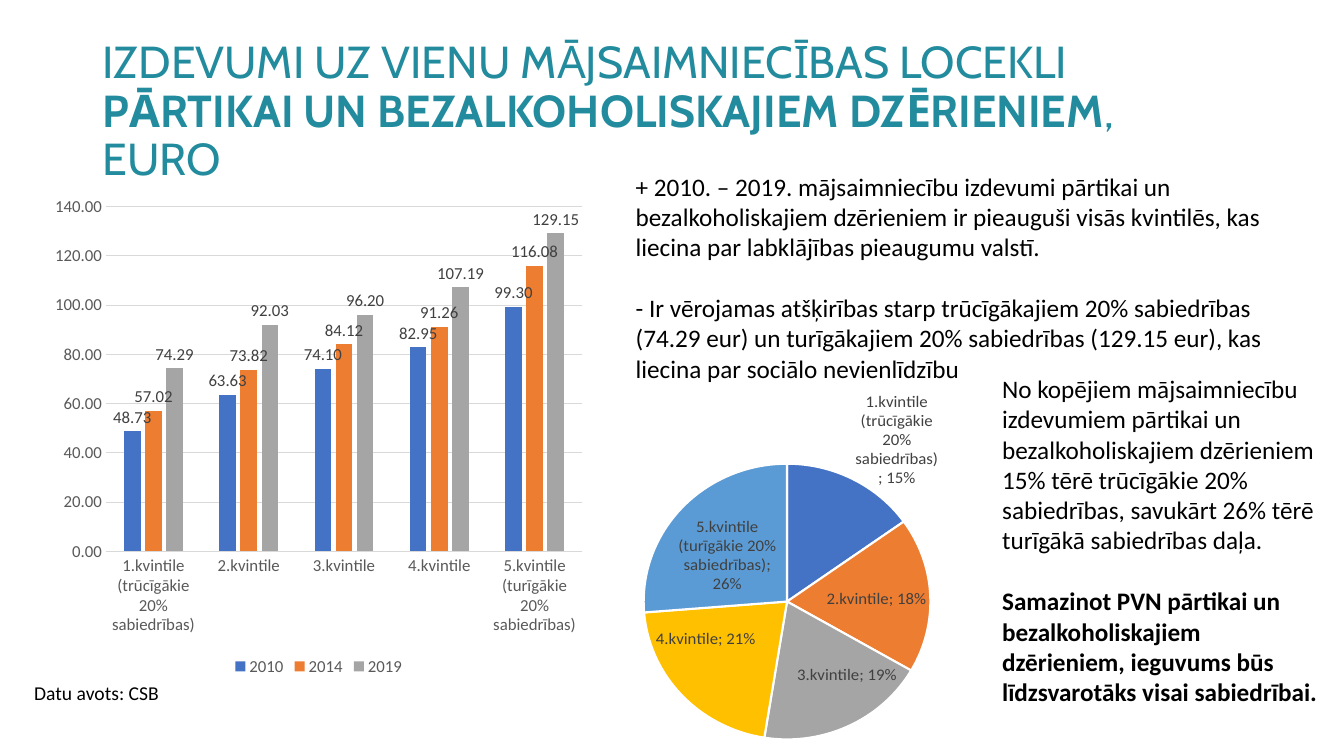
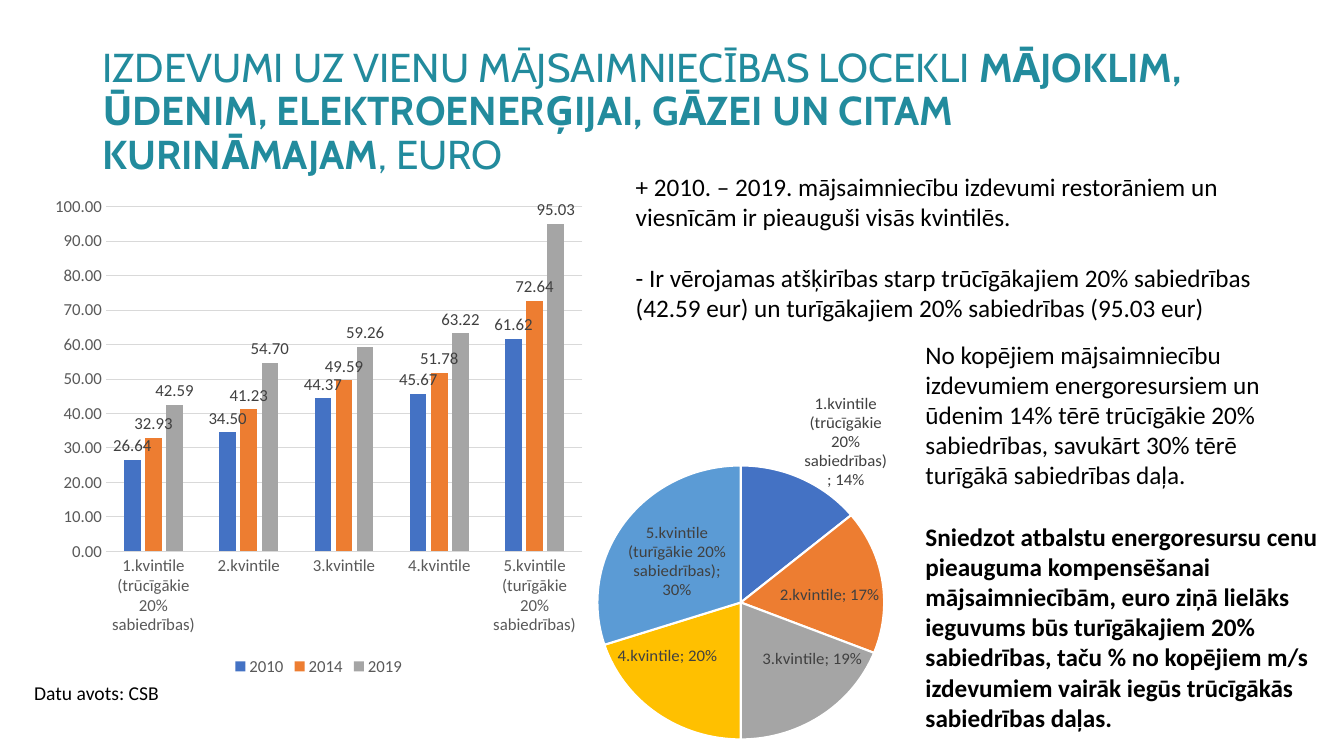
"""Build two slides on household spending by income quintile."""
from lxml import etree
from pptx import Presentation
from pptx.chart.data import CategoryChartData
from pptx.dml.color import RGBColor
from pptx.enum.chart import XL_CHART_TYPE, XL_LABEL_POSITION, XL_LEGEND_POSITION, XL_TICK_MARK
from pptx.enum.text import MSO_ANCHOR, MSO_AUTO_SIZE, PP_ALIGN
from pptx.oxml.ns import qn
from pptx.util import Pt

PX = 9525
COLUMN, PIE = XL_CHART_TYPE.COLUMN_CLUSTERED, XL_CHART_TYPE.PIE
OUTSIDE, BEST_FIT = XL_LABEL_POSITION.OUTSIDE_END, XL_LABEL_POSITION.BEST_FIT
BOTTOM, NO_TICK = XL_LEGEND_POSITION.BOTTOM, XL_TICK_MARK.NONE
LEFT, MIDDLE = PP_ALIGN.LEFT, MSO_ANCHOR.MIDDLE
FIT_SHAPE, NO_FIT = MSO_AUTO_SIZE.SHAPE_TO_FIT_TEXT, MSO_AUTO_SIZE.NONE

COLORS = {
    "title": "228B9D", "text": "000000", "axis": "595959", "label": "404040",
    "grid": "D9D9D9", "white": "FFFFFF", "blue": "4472C4", "orange": "ED7D31",
    "gray": "A5A5A5", "gold": "FFC000", "sky": "5B9BD5",
}
PALETTE = ["blue", "orange", "gray", "gold", "sky"]
YEARS = ["2010", "2014", "2019"]
QUINTILES = [
    "1.kvintile (trūcīgākie 20% sabiedrības)", "2.kvintile", "3.kvintile",
    "4.kvintile", "5.kvintile (turīgākie 20% sabiedrības)",
]
PIE_LAYOUT = {
    "layoutTarget": "inner", "xMode": "edge", "yMode": "edge",
    "x": "0.002", "y": "0.205", "w": "0.66", "h": "0.79",
}

SLIDES = [
    {
        "topic": "PĀRTIKAI UN BEZALKOHOLISKAJIEM DZĒRIENIEM",
        "title_size": 32,
        "spending": [
            [48.73, 63.63, 74.1, 82.95, 99.3],
            [57.02, 73.82, 84.12, 91.26, 116.08],
            [74.29, 92.03, 96.2, 107.19, 129.15],
        ],
        "shares": [0.15, 0.18, 0.19, 0.21, 0.26],
        "pie_left": 612,
        "trend_height": 213,
        "trend": [
            "+ 2010. – 2019. mājsaimniecību izdevumi pārtikai un bezalkoholiskajiem dzērieniem ir pieauguši visās kvintilēs, kas liecina par labklājības pieaugumu valstī.",
            "- Ir vērojamas atšķirības starp trūcīgākajiem 20% sabiedrības (74.29 eur) un turīgākajiem 20% sabiedrības (129.15 eur), kas liecina par sociālo nevienlīdzību",
        ],
        "conclusion_box": (945, 351, 320, 329),
        "conclusion": [
            "No kopējiem mājsaimniecību izdevumiem pārtikai un bezalkoholiskajiem dzērieniem 15% tērē trūcīgākie 20% sabiedrības, savukārt 26% tērē turīgākā sabiedrības daļa.",
            "Samazinot PVN pārtikai un bezalkoholiskajiem dzērieniem, ieguvums būs līdzsvarotāks visai sabiedrībai.",
        ],
    },
    {
        "topic": "MĀJOKLIM, ŪDENIM, ELEKTROENERĢIJAI, GĀZEI UN CITAM KURINĀMAJAM",
        "title_size": 28.8,
        "spending": [
            [26.64, 34.5, 44.37, 45.67, 61.62],
            [32.93, 41.23, 49.59, 51.78, 72.64],
            [42.59, 54.7, 59.26, 63.22, 95.03],
        ],
        "shares": [0.14, 0.17, 0.19, 0.2, 0.3],
        "pie_left": 568,
        "trend_height": 156,
        "trend": [
            "+ 2010. – 2019. mājsaimniecību izdevumi restorāniem un viesnīcām ir pieauguši visās kvintilēs.",
            "- Ir vērojamas atšķirības starp trūcīgākajiem 20% sabiedrības (42.59 eur) un turīgākajiem 20% sabiedrības (95.03 eur)",
        ],
        "conclusion_box": (872, 318, 393, 388),
        "conclusion": [
            "No kopējiem mājsaimniecību izdevumiem energoresursiem un ūdenim 14% tērē trūcīgākie 20% sabiedrības, savukārt 30% tērē turīgākā sabiedrības daļa.",
            "Sniedzot atbalstu energoresursu cenu pieauguma kompensēšanai mājsaimniecībām, euro ziņā lielāks ieguvums būs turīgākajiem 20% sabiedrības, taču % no kopējiem m/s izdevumiem vairāk iegūs trūcīgākās sabiedrības daļas.",
        ],
    },
]


def set_font(font, size=12, color="text", name="Calibri", bold=False):
    font.size, font.name, font.bold = Pt(size), name, bold
    font.color.rgb = RGBColor.from_string(COLORS[color])


def add_text(slide, box, paragraphs, size=18, bold_last=False):
    sp = slide.shapes.add_textbox(*[v * PX for v in box])
    tf = sp.text_frame
    tf.word_wrap, tf.auto_size = True, FIT_SHAPE
    for i, text in enumerate(paragraphs):
        p = tf.add_paragraph() if i else tf.paragraphs[0]
        if i:
            p.space_before = Pt(22)
        r = p.add_run()
        r.text = text
        set_font(r.font, size, bold=bold_last and i == len(paragraphs) - 1)


prs = Presentation()
prs.slide_width, prs.slide_height = 1280 * PX, 720 * PX

for content in SLIDES:
    slide = prs.slides.add_slide(prs.slide_layouts[5])

    title = slide.shapes.title
    title.left, title.top, title.width, title.height = [v * PX for v in (88, 38, 1104, 139)]
    tf = title.text_frame
    tf.vertical_anchor, tf.auto_size, tf.word_wrap = MIDDLE, NO_FIT, True
    p = tf.paragraphs[0]
    p.alignment, p.line_spacing = LEFT, 0.9
    for text, bold in [("IZDEVUMI UZ VIENU MĀJSAIMNIECĪBAS LOCEKLI ", False),
                       (content["topic"], True), (", EURO", False)]:
        r = p.add_run()
        r.text = text
        set_font(r.font, content["title_size"], "title", "Cabin", bold)

    data = CategoryChartData(number_format="0.00")
    data.categories = QUINTILES
    for year, values in zip(YEARS, content["spending"]):
        data.add_series(year, values)
    chart = slide.shapes.add_chart(COLUMN, *[v * PX for v in (42, 178, 523, 470)], data).chart
    set_font(chart.font, 10)
    chart.has_title = False
    chart.has_legend = True
    chart.legend.position, chart.legend.include_in_layout = BOTTOM, False
    set_font(chart.legend.font, color="axis")
    for axis in (chart.category_axis, chart.value_axis):
        axis.major_tick_mark = axis.minor_tick_mark = NO_TICK
        set_font(axis.tick_labels.font, color="axis")
    chart.value_axis.tick_labels.number_format = "0.00"
    chart.value_axis.tick_labels.number_format_is_linked = False
    chart.value_axis.format.line.fill.background()
    for line in (chart.category_axis.format.line, chart.value_axis.major_gridlines.format.line):
        line.width = Pt(0.75)
        line.color.rgb = RGBColor.from_string(COLORS["grid"])
    plot = chart.plots[0]
    plot.gap_width, plot.overlap, plot.vary_by_categories = 219, -27, False
    for series, color in zip(plot.series, PALETTE):
        series.format.fill.solid()
        series.format.fill.fore_color.rgb = RGBColor.from_string(COLORS[color])
        labels = series.data_labels
        labels.show_value, labels.position = True, OUTSIDE
        labels.number_format, labels.number_format_is_linked = "0.00", False
        set_font(labels.font, color="label")

    add_text(slide, (596, 158, 629, content["trend_height"]), content["trend"])

    data = CategoryChartData(number_format="0%")
    data.categories = QUINTILES
    data.add_series("Series 1", content["shares"])
    box = [v * PX for v in (content["pie_left"], 360, 414, 346)]
    chart = slide.shapes.add_chart(PIE, *box, data).chart
    set_font(chart.font, 10)
    chart.has_title = chart.has_legend = False
    plot = chart.plots[0]
    plot.vary_by_categories = True
    series = plot.series[0]
    for i, color in enumerate(PALETTE):
        fmt = series.points[i].format
        fmt.fill.solid()
        fmt.fill.fore_color.rgb = RGBColor.from_string(COLORS[color])
        fmt.line.width = Pt(1.5)
        fmt.line.color.rgb = RGBColor.from_string(COLORS["white"])
    labels = series.data_labels
    labels.show_value = labels.show_category_name = True
    labels.number_format, labels.number_format_is_linked = "0%", False
    labels.position = BEST_FIT
    set_font(labels.font, color="label")
    first = series.points[0].data_label
    set_font(first.font, color="label")
    first.position = OUTSIDE
    for flag in series._element.xpath(".//c:dLbl/c:showCatName"):
        flag.set("val", "1")
    area = chart._chartSpace.chart.plotArea
    for old in area.findall(qn("c:layout")):
        area.remove(old)
    layout = etree.Element(qn("c:layout"))
    manual = etree.SubElement(layout, qn("c:manualLayout"))
    for tag, value in PIE_LAYOUT.items():
        etree.SubElement(manual, qn("c:" + tag)).set("val", value)
    area.insert(0, layout)

    add_text(slide, content["conclusion_box"], content["conclusion"], bold_last=True)
    add_text(slide, (23, 644, 403, 33), ["Datu avots: CSB"], size=14)

prs.save("out.pptx")
